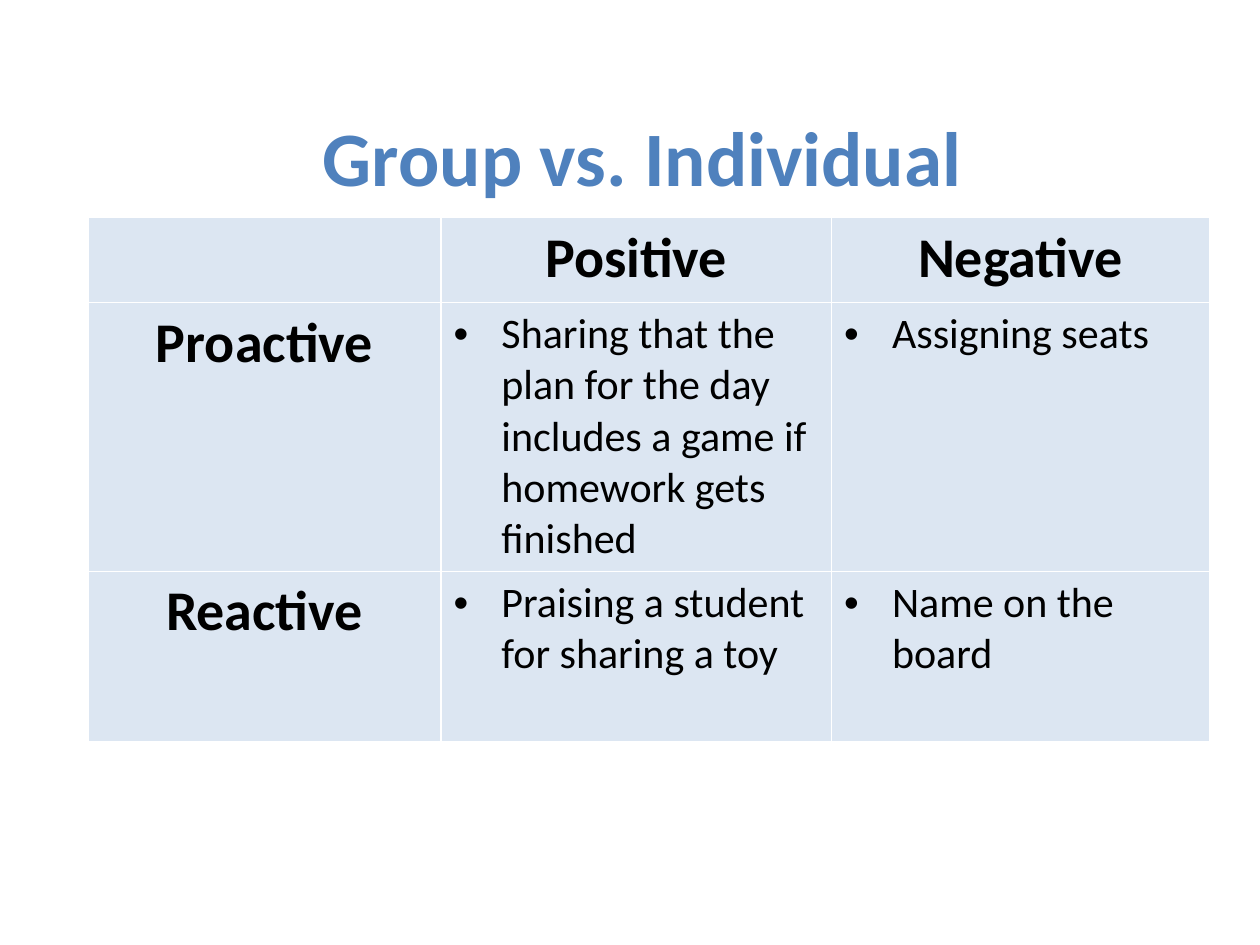
import pptx
import pptx.util
import pptx.dml.color
import pptx.enum.text
import lxml.etree

BLUE = pptx.dml.color.RGBColor(0x4F, 0x81, 0xBD)
PALE = pptx.dml.color.RGBColor(0xDC, 0xE6, 0xF2)
BLACK = pptx.dml.color.RGBColor(0, 0, 0)

COLS = (0.28, 0.31, 0.3)
ROWS = (0.09, 0.26, 0.18)
GRID = (
    ("", "Positive", "Negative"),
    ("Proactive",
     "Sharing that the plan for the day includes a game if homework gets finished",
     "Assigning seats"),
    ("Reactive", "Praising a student for sharing a toy", "Name on the board"),
)


class Deck:
    """Holds the style and the current slide; lengths are shares of its size."""

    font = "Calibri"
    indent = pptx.util.Inches(0.38)

    def __init__(self, width, height):
        self.file = pptx.Presentation()
        self.file.slide_width = self.width = pptx.util.Inches(width)
        self.file.slide_height = self.height = pptx.util.Inches(height)
        self.slide = self.file.slides.add_slide(self.file.slide_layouts[5])

    def place(self, left, top, width, height):
        return (int(left * self.width), int(top * self.height),
                int(width * self.width), int(height * self.height))

    def style(self, para, size, color, bold):
        for run in para.runs:
            run.font.name = self.font
            run.font.size = pptx.util.Pt(size)
            run.font.bold = bold
            run.font.color.rgb = color

    def title(self, text, *box):
        shape = self.slide.shapes.title
        shape.left, shape.top, shape.width, shape.height = self.place(*box)
        frame = shape.text_frame
        frame.text = text
        frame.vertical_anchor = pptx.enum.text.MSO_ANCHOR.MIDDLE
        frame.paragraphs[0].alignment = pptx.enum.text.PP_ALIGN.CENTER
        self.style(frame.paragraphs[0], 44, BLUE, True)

    def bullet(self, para):
        props = para._p.get_or_add_pPr()
        props.set("marL", str(self.indent))
        props.set("indent", str(-self.indent))
        space = props.nsmap["a"]
        face = lxml.etree.SubElement(props, f"{{{space}}}buFont")
        face.set("typeface", "Arial")
        mark = lxml.etree.SubElement(props, f"{{{space}}}buChar")
        mark.set("char", "•")

    def cell(self, cell, text, head):
        cell.fill.solid()
        cell.fill.fore_color.rgb = PALE
        cell.text_frame.text = text
        para = cell.text_frame.paragraphs[0]
        if head:
            para.alignment = pptx.enum.text.PP_ALIGN.CENTER
        else:
            self.bullet(para)
        self.style(para, 32 if head else 24, BLACK, head)

    def table(self, grid, left, top, cols, rows):
        box = self.place(left, top, sum(cols), sum(rows))
        table = self.slide.shapes.add_table(len(rows), len(cols), *box).table
        for col, share in zip(table.columns, cols):
            col.width = int(share * self.width)
        for row, share in zip(table.rows, rows):
            row.height = int(share * self.height)
        for r, line in enumerate(grid):
            for c, text in enumerate(line):
                self.cell(table.cell(r, c), text, r == 0 or c == 0)

    def save(self):
        self.file.save("out.pptx")


def main():
    deck = Deck(10, 7.5)
    deck.title("Group vs. Individual", 0.06, 0.08, 0.9, 0.17)
    deck.table(GRID, 0.07, 0.23, COLS, ROWS)
    deck.save()


if __name__ == "__main__":
    main()
